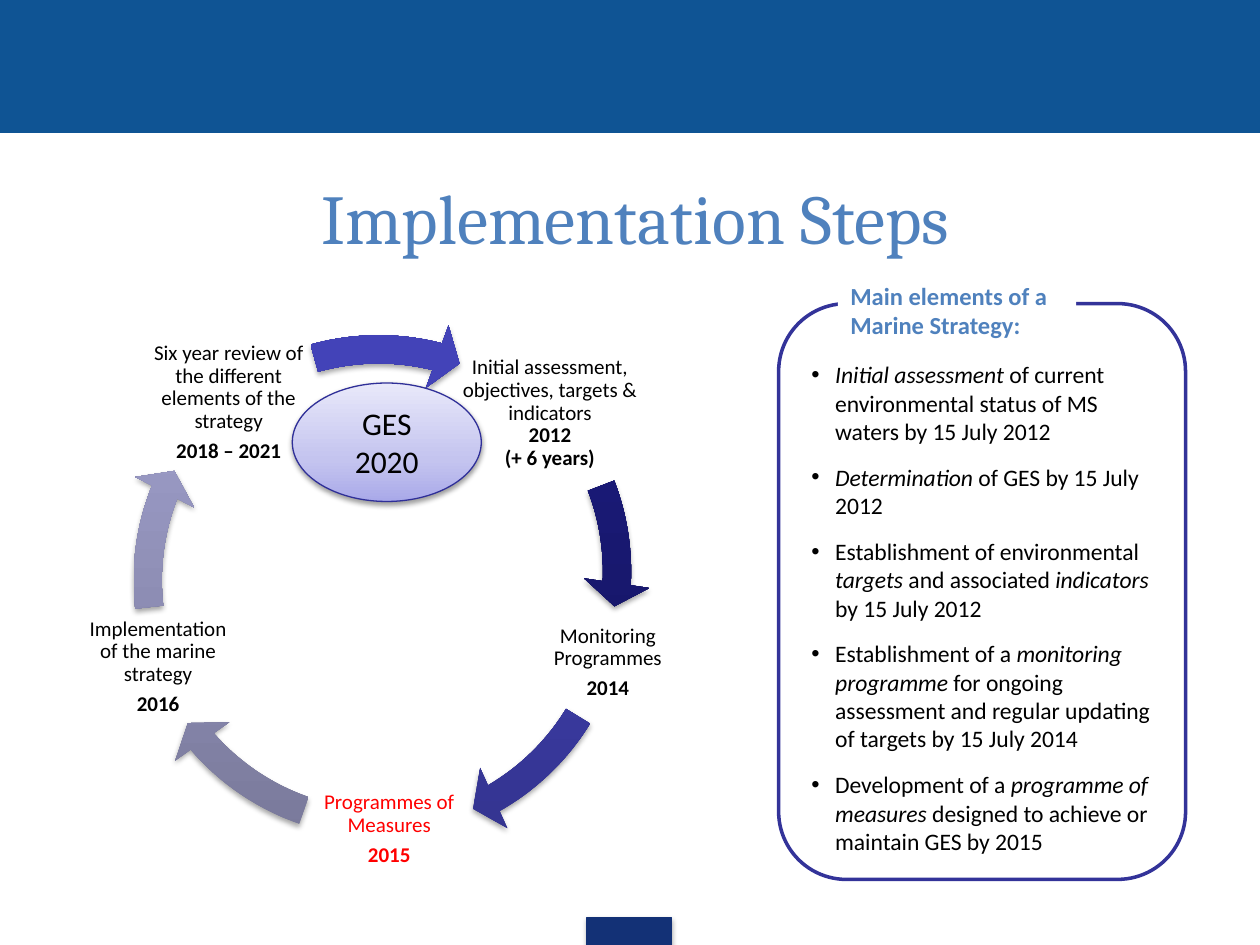
"""Build the Implementation Steps slide with its cycle and strategy panel."""
from lxml.etree import SubElement
from pptx import Presentation
from pptx.dml.color import RGBColor
from pptx.enum.shapes import MSO_SHAPE
from pptx.enum.text import MSO_ANCHOR, PP_ALIGN
from pptx.oxml import parse_xml
from pptx.oxml.ns import nsdecls, qn
from pptx.util import Inches, Pt

WHITE, BLACK, RED = RGBColor(255, 255, 255), RGBColor(0, 0, 0), RGBColor(255, 0, 0)
BANNER_BLUE = RGBColor(0x0F, 0x54, 0x94)
FOOTER_BLUE = RGBColor(0x13, 0x31, 0x76)
HEADING_BLUE = RGBColor(0x4F, 0x81, 0xBD)
PANEL_BLUE = RGBColor(0x33, 0x33, 0x99)
OVAL_LINE = RGBColor(0x2F, 0x2F, 0x98)

NAVY = ((0, "14145D"), (80, "1A1A79"), (100, "18187B"))
INDIGO = ((0, "33338E"), (80, "4343B8"), (100, "4141BB"))
GREY = ((0, "787899"), (80, "9C9CC7"), (100, "9C9CC9"))
LILAC = ((0, "A9A9E9"), (35, "C4C4EF"), (100, "E8E8FA"))

STEPS = [
    {"box": (3.65, 2.71, 1.43, 1.14), "color": BLACK, "gap": 0,
     "text": ["Initial assessment, objectives, targets & indicators", "*2012", "*(+ 6 years)"],
     "arrow": (0.85, 2.38), "angles": (338.93, 2.83), "shades": NAVY},
    {"box": (4.36, 4.82, 0.93, 0.88), "color": BLACK, "gap": 4.2,
     "text": ["Monitoring Programmes", "*2014"],
     "arrow": (0.82, 2.54), "angles": (31.52, 60.06), "shades": INDIGO},
    {"box": (2.41, 6.09, 1.36, 0.98), "color": RED, "gap": 4.2,
     "text": ["Programmes of Measures", "*2015"],
     "arrow": (0.88, 2.49), "angles": (109.24, 139.08), "shades": GREY},
    {"box": (0.68, 4.83, 1.15, 0.93), "color": BLACK, "gap": 4.2,
     "text": ["Implementation of the marine strategy", "*2016"],
     "arrow": (0.91, 2.45), "angles": (173.51, 201.68), "shades": GREY},
    {"box": (1.14, 2.66, 1.35, 1.07), "color": BLACK, "gap": 4.2,
     "text": ["Six year review of the different elements of the strategy", "*2018 – 2021"],
     "arrow": (0.85, 2.51), "angles": (254.36, 284.24), "shades": INDIGO},
]
ARROW_SIZE = 4.31

ELEMENTS = [
    "_Initial assessment_ of current environmental status of MS waters by 15 July 2012",
    "_Determination_ of GES by 15 July 2012",
    "Establishment of environmental _targets_ and associated _indicators_ by 15 July 2012",
    "Establishment of a _monitoring programme_ for ongoing assessment and regular "
    "updating of targets by 15 July 2014",
    "Development of a _programme of measures_ designed to achieve or maintain GES by 2015",
]


def write_text(shape, lines, size, color, font="Calibri", align=PP_ALIGN.LEFT,
               anchor=MSO_ANCHOR.TOP, insets=(0.1, 0.05, 0.1, 0.05), spacing=None,
               before=0, after=0, indent=0, bullet=None, bold=False):
    """Write lines; a leading * makes a line bold and _..._ makes words italic."""
    frame = shape.text_frame
    frame.word_wrap, frame.vertical_anchor = True, anchor
    (frame.margin_left, frame.margin_top,
     frame.margin_right, frame.margin_bottom) = map(Inches, insets)
    for index, line in enumerate(lines):
        paragraph = frame.add_paragraph() if index else frame.paragraphs[0]
        properties = paragraph._p.get_or_add_pPr()
        properties.set("marL", str(Inches(indent)))
        if bullet:
            properties.set("indent", str(-Inches(indent)))
            SubElement(properties, qn("a:buFont")).set("typeface", "Arial")
            SubElement(properties, qn("a:buChar")).set("char", bullet)
        paragraph.alignment = align
        paragraph.line_spacing = spacing
        paragraph.space_before = Pt(before if index else 0)
        paragraph.space_after = Pt(after)
        for part, words in enumerate(line.removeprefix("*").split("_")):
            if words:
                run = paragraph.add_run()
                run.text = words
                run.font.name, run.font.size = font, Pt(size)
                run.font.color.rgb = color
                run.font.bold = bold or line.startswith("*")
                run.font.italic = part % 2 == 1


def add_box(slide, box):
    return slide.shapes.add_textbox(*map(Inches, box))


def add_shape(slide, kind, box, fill=None, line=None, width=0.75):
    shape = slide.shapes.add_shape(kind, *map(Inches, box))
    shape.shadow.inherit = False
    if fill is not None:
        shape.fill.solid()
        shape.fill.fore_color.rgb = fill
    if line is None:
        shape.line.fill.background()
    else:
        shape.line.color.rgb, shape.line.width = line, Pt(width)
    return shape


def shade(shape, stops):
    shape.fill.gradient()
    shape.fill.gradient_angle = 90
    stop_list = shape._element.spPr.find(qn("a:gradFill")).find(qn("a:gsLst"))
    stop_list.clear()
    for position, color in stops:
        stop = SubElement(stop_list, qn("a:gs"), pos=str(position * 1000))
        SubElement(stop, qn("a:srgbClr"), val=color)


def cast_shadow(shape, opacity=35, distance=1.8):
    effects = shape._element.spPr.find(qn("a:effectLst"))
    effects.append(parse_xml(
        f'<a:outerShdw {nsdecls("a")} blurRad="{Pt(3.1)}" dist="{Pt(distance)}" '
        f'dir="5400000" rotWithShape="0"><a:srgbClr val="000000">'
        f'<a:alpha val="{opacity * 1000}"/></a:srgbClr></a:outerShdw>'))


def add_panel(slide):
    add_shape(slide, MSO_SHAPE.ROUNDED_RECTANGLE, (6.18, 2.41, 3.23, 4.57),
              WHITE, PANEL_BLUE, 2)
    write_text(add_box(slide, (6.34, 2.81, 2.91, 3.91)), ELEMENTS, 13.5, BLACK,
               before=10, indent=0.19, bullet="•")
    heading = add_shape(slide, MSO_SHAPE.RECTANGLE, (6.65, 2.18, 1.89, 0.57), WHITE)
    write_text(heading, ["Main elements of a Marine Strategy:"], 14, HEADING_BLUE,
               insets=(0.1, 0.05, 0, 0.05), bold=True)


def add_cycle(slide):
    for step in STEPS:
        write_text(add_box(slide, step["box"]), step["text"], 12, step["color"],
                   align=PP_ALIGN.CENTER, anchor=MSO_ANCHOR.MIDDLE,
                   insets=(0.02,) * 4, spacing=0.9, after=step["gap"])
        arrow = add_shape(slide, MSO_SHAPE.CIRCULAR_ARROW,
                          (*step["arrow"], ARROW_SIZE, ARROW_SIZE))
        start, end = step["angles"]
        for index, value in enumerate((0.052, 5.6 * 0.6, end * 0.6, start * 0.6, 0.061)):
            arrow.adjustments[index] = value
        shade(arrow, step["shades"])
        cast_shadow(arrow)
    goal = add_shape(slide, MSO_SHAPE.OVAL, (2.32, 3.04, 1.5, 0.94), line=OVAL_LINE)
    shade(goal, LILAC)
    cast_shadow(goal, opacity=38, distance=1.6)
    write_text(goal, ["GES", "2020"], 18, BLACK, align=PP_ALIGN.CENTER,
               anchor=MSO_ANCHOR.MIDDLE)


def main():
    presentation = Presentation()
    presentation.slide_width, presentation.slide_height = Inches(10), Inches(7.5)
    slide = presentation.slides.add_slide(presentation.slide_layouts[6])
    add_shape(slide, MSO_SHAPE.RECTANGLE, (0, 0, 10, 1.05), BANNER_BLUE, BANNER_BLUE)
    footer = add_shape(slide, MSO_SHAPE.RECTANGLE, (4.66, 7.28, 0.67, 0.22),
                       FOOTER_BLUE, FOOTER_BLUE)
    cast_shadow(footer)
    write_text(add_box(slide, (0.51, 1.39, 8.67, 0.71)), ["Implementation Steps"], 40,
               HEADING_BLUE, font="Cambria", align=PP_ALIGN.CENTER,
               anchor=MSO_ANCHOR.BOTTOM, indent=0.39)
    add_panel(slide)
    add_cycle(slide)
    presentation.save("out.pptx")


if __name__ == "__main__":
    main()
